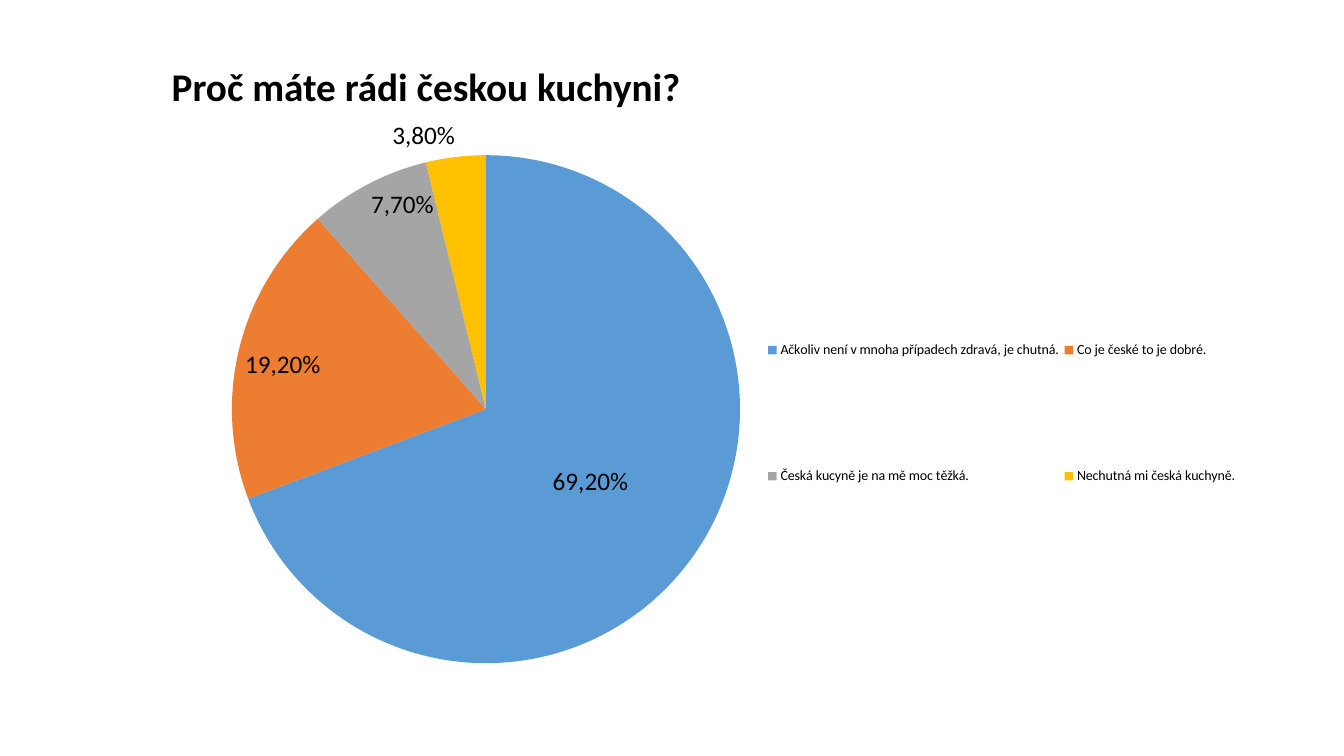
from pptx import Presentation
from pptx import util as u
from pptx.chart.data import CategoryChartData
from pptx.dml.color import RGBColor
from pptx.enum import chart as charts, text
from pptx.oxml import parse_xml
from pptx.oxml.ns import nsdecls

HEADING = "Proč máte rádi českou kuchyni?"
SERIES = "Prodej"
INSIDE = charts.XL_LABEL_POSITION.INSIDE_END
ANSWERS = [
    ("Ačkoliv není v mnoha případech zdravá, je chutná.", 69.27, "69,20%",
     "5B9BD5", charts.XL_LABEL_POSITION.CENTER),
    ("Co je české to je dobré.", 19.22, "19,20%", "ED7D31", INSIDE),
    ("Česká kucyně je na mě moc těžká.", 7.71, "7,70%", "A5A5A5", INSIDE),
    ("Nechutná mi česká kuchyně.", 3.8, "3,80%", "FFC000",
     charts.XL_LABEL_POSITION.OUTSIDE_END),
]
THEME = {"font": "Calibri", "ink": "000000", "heading": 28, "label": 18, "legend": 10}
CHART_BOX = (0.91, 1.06, 11.47, 5.67)
PIE_BOX = (2.3, 1.54, 5.04, 5.04)
LEGEND_BOX = (7.56, 2.3, 4.75, 3.6)
HEADING_BOX = (0.77, 0.57, 6.91, 0.57)


def inches(box):
    return [u.Inches(length) for length in box]


def style(font, size, bold=False):
    font.name = THEME["font"]
    font.size = u.Pt(THEME[size])
    font.bold = bold
    font.color.rgb = RGBColor.from_string(THEME["ink"])


def manual_layout(box, inner=False):
    left, top, width, height = CHART_BOX
    parts = {
        "x": (box[0] - left) / width,
        "y": (box[1] - top) / height,
        "w": box[2] / width,
        "h": box[3] / height,
    }
    target = '<c:layoutTarget val="inner"/>' if inner else ""
    modes = "".join(f'<c:{axis}Mode val="edge"/>' for axis in "xy")
    sizes = "".join(f'<c:{name} val="{part:.4f}"/>' for name, part in parts.items())
    return parse_xml(
        f'<c:layout {nsdecls("c")}><c:manualLayout>{target}{modes}{sizes}'
        "</c:manualLayout></c:layout>"
    )


def replace_layout(parent, layout, index):
    for old in parent.findall(layout.tag):
        parent.remove(old)
    parent.insert(index, layout)


def add_pie(slide):
    data = CategoryChartData(number_format="0.00")
    data.categories = [answer[0] for answer in ANSWERS]
    data.add_series(SERIES, [answer[1] for answer in ANSWERS])
    frame = slide.shapes.add_chart(charts.XL_CHART_TYPE.PIE, *inches(CHART_BOX), data)
    chart = frame.chart
    chart.has_title = False
    style(chart.font, "legend")

    plot = chart.plots[0]
    plot.vary_by_categories = True
    series = plot.series[0]
    labels = series.data_labels
    labels.show_percentage = True
    labels.show_value = False
    labels.number_format = "0.00%"
    labels.number_format_is_linked = False
    style(labels.font, "label")
    for index, (_, _, caption, colour, position) in enumerate(ANSWERS):
        point = series.points[index]
        point.format.fill.solid()
        point.format.fill.fore_color.rgb = RGBColor.from_string(colour)
        point.format.line.fill.background()
        label = point.data_label
        run = label.text_frame.paragraphs[0].add_run()
        run.text = caption
        style(run.font, "label")
        label.position = position

    chart.has_legend = True
    legend = chart.legend
    legend.position = charts.XL_LEGEND_POSITION.RIGHT
    legend.include_in_layout = False
    style(legend.font, "legend")
    replace_layout(legend._element, manual_layout(LEGEND_BOX), 1)
    replace_layout(plot._element.getparent(), manual_layout(PIE_BOX, inner=True), 0)


def add_heading(slide):
    frame = slide.shapes.add_textbox(*inches(HEADING_BOX)).text_frame
    frame.word_wrap = True
    frame.auto_size = text.MSO_AUTO_SIZE.SHAPE_TO_FIT_TEXT
    paragraph = frame.paragraphs[0]
    paragraph.alignment = text.PP_ALIGN.CENTER
    run = paragraph.add_run()
    run.text = HEADING
    style(run.font, "heading", bold=True)


def main():
    presentation = Presentation()
    presentation.slide_width = u.Inches(13.33)
    presentation.slide_height = u.Inches(7.5)
    slide = presentation.slides.add_slide(presentation.slide_layouts[6])
    add_pie(slide)
    add_heading(slide)
    presentation.save("out.pptx")


if __name__ == "__main__":
    main()
